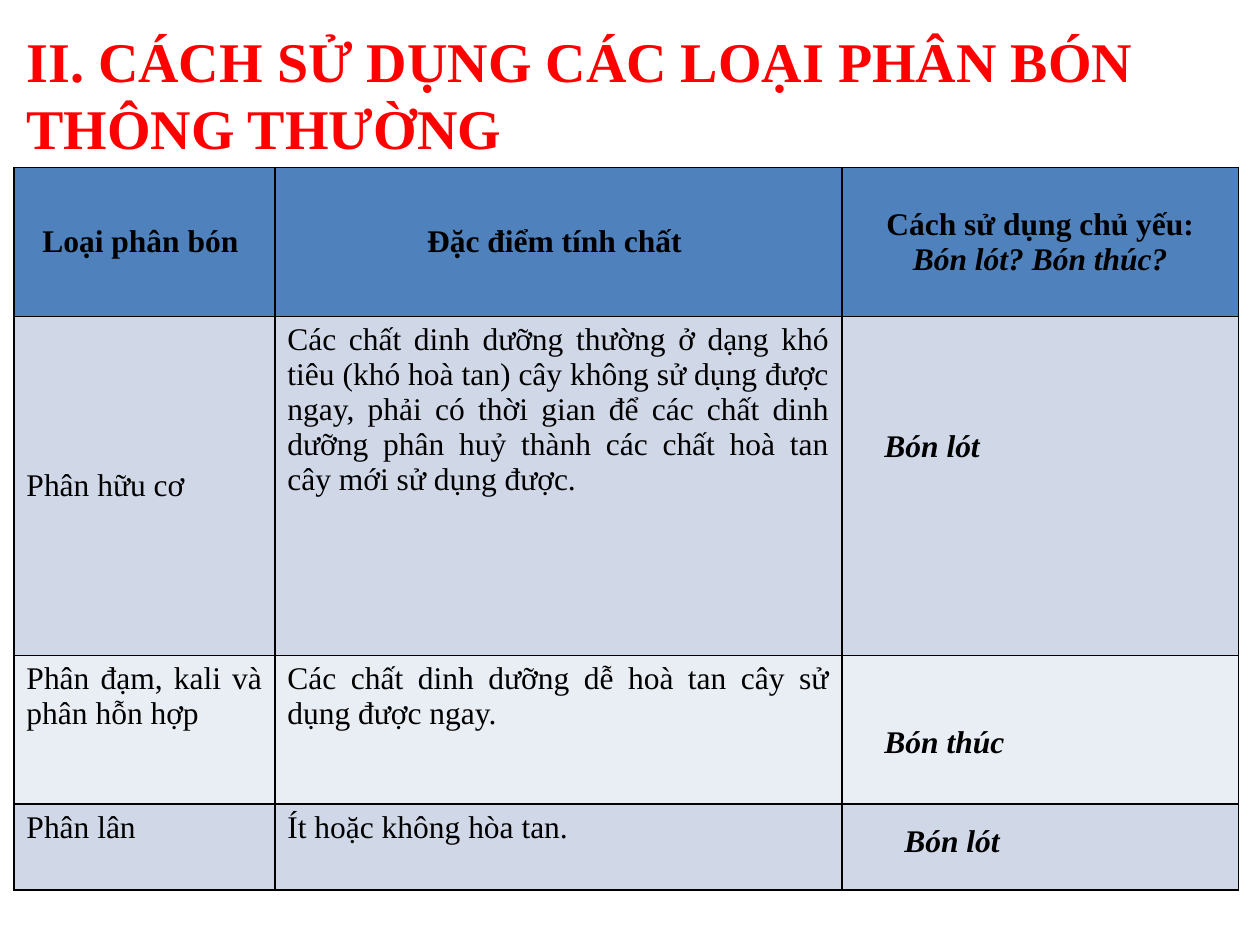
from lxml.etree import SubElement
from pptx import Presentation
from pptx.dml.color import RGBColor
from pptx.enum.text import MSO_ANCHOR, MSO_AUTO_SIZE, PP_ALIGN
from pptx.oxml.ns import qn
from pptx.util import Cm, Pt

FONT = "Times New Roman"
RED = RGBColor(0xFF, 0x00, 0x00)
BLACK = RGBColor(0x00, 0x00, 0x00)
HEADER_BLUE = RGBColor(0x4F, 0x81, 0xBD)
BAND_DARK = RGBColor(0xD0, 0xD8, 0xE8)
BAND_LIGHT = RGBColor(0xE9, 0xED, 0xF4)

COLUMN_WIDTHS = [5.26, 11.43, 8]
ROW_HEIGHTS = [3, 6.83, 3, 1.73]
ROWS = [
    ["Loại phân bón ", "Đặc điểm tính chất ", "Cách sử dụng chủ yếu:\nBón lót? Bón thúc?"],
    [
        "Phân hữu cơ",
        "Các chất dinh dưỡng thường ở dạng khó tiêu (khó hoà tan) cây không sử dụng "
        "được ngay, phải có thời gian để các chất dinh dưỡng phân huỷ thành các chất "
        "hoà tan cây mới sử dụng được.",
        "",
    ],
    ["Phân đạm, kali và phân hỗn hợp", "Các chất dinh dưỡng dễ hoà tan cây sử dụng được ngay.", ""],
    ["Phân lân", "Ít hoặc không hòa tan.", ""],
]
ANSWERS = [
    ("Bón lót", 17.58, 8.46, 5.59),
    ("Bón thúc", 17.58, 14.43, 5.59),
    ("Bón lót", 17.98, 16.43, 6.78),
]


def format_paragraph(paragraph, size=18, color=BLACK, bold=False, italic=False, alignment=PP_ALIGN.LEFT):
    paragraph.alignment = alignment
    for run in paragraph.runs:
        run.font.name = FONT
        run.font.size = Pt(size)
        run.font.color.rgb = color
        run.font.bold = bold
        run.font.italic = italic


def set_title(slide, text):
    title = slide.shapes.title
    title.left, title.top, title.width, title.height = Cm(0.28), Cm(0.41), Cm(24.13), Cm(3)
    text_frame = title.text_frame
    text_frame.text = text
    text_frame.word_wrap = True
    text_frame.auto_size = MSO_AUTO_SIZE.NONE
    text_frame.vertical_anchor = MSO_ANCHOR.TOP
    format_paragraph(text_frame.paragraphs[0], size=32, color=RED, bold=True)


def add_borders(cell):
    properties = cell._tc.get_or_add_tcPr()
    for side in ("a:lnL", "a:lnR", "a:lnT", "a:lnB"):
        line = SubElement(properties, qn(side), w=str(Pt(1)))
        fill = SubElement(line, qn("a:solidFill"))
        SubElement(fill, qn("a:srgbClr"), val=str(BLACK))


def fill_cell(cell, text, color, is_header):
    add_borders(cell)
    cell.fill.solid()
    cell.fill.fore_color.rgb = color
    cell.text_frame.text = text
    alignment = PP_ALIGN.CENTER if is_header else PP_ALIGN.JUSTIFY
    for index, paragraph in enumerate(cell.text_frame.paragraphs):
        format_paragraph(paragraph, bold=is_header, italic=index > 0, alignment=alignment)


def add_fertilizer_table(slide):
    frame = slide.shapes.add_table(
        len(ROWS), len(COLUMN_WIDTHS), Cm(0.28), Cm(3.38), Cm(sum(COLUMN_WIDTHS)), Cm(sum(ROW_HEIGHTS))
    )
    table = frame.table
    for column, width in zip(table.columns, COLUMN_WIDTHS):
        column.width = Cm(width)
    for row_index, (row, height, texts) in enumerate(zip(table.rows, ROW_HEIGHTS, ROWS)):
        row.height = Cm(height)
        is_header = row_index == 0
        band = BAND_DARK if row_index % 2 else BAND_LIGHT
        for cell, text in zip(row.cells, texts):
            fill_cell(cell, text, HEADER_BLUE if is_header else band, is_header)
            if is_header:
                cell.vertical_anchor = MSO_ANCHOR.MIDDLE
    table.cell(1, 0).vertical_anchor = MSO_ANCHOR.MIDDLE


def add_answer(slide, text, left, top, width):
    text_frame = slide.shapes.add_textbox(Cm(left), Cm(top), Cm(width), Cm(1.02)).text_frame
    text_frame.text = text
    text_frame.word_wrap = True
    text_frame.auto_size = MSO_AUTO_SIZE.SHAPE_TO_FIT_TEXT
    format_paragraph(text_frame.paragraphs[0], bold=True, italic=True)


def main():
    presentation = Presentation()
    presentation.slide_width = Cm(25.4)
    presentation.slide_height = Cm(19.05)
    slide = presentation.slides.add_slide(presentation.slide_layouts[5])
    set_title(slide, "II. CÁCH SỬ DỤNG CÁC LOẠI PHÂN BÓN THÔNG THƯỜNG")
    add_fertilizer_table(slide)
    for answer in ANSWERS:
        add_answer(slide, *answer)
    presentation.save("out.pptx")


if __name__ == "__main__":
    main()
